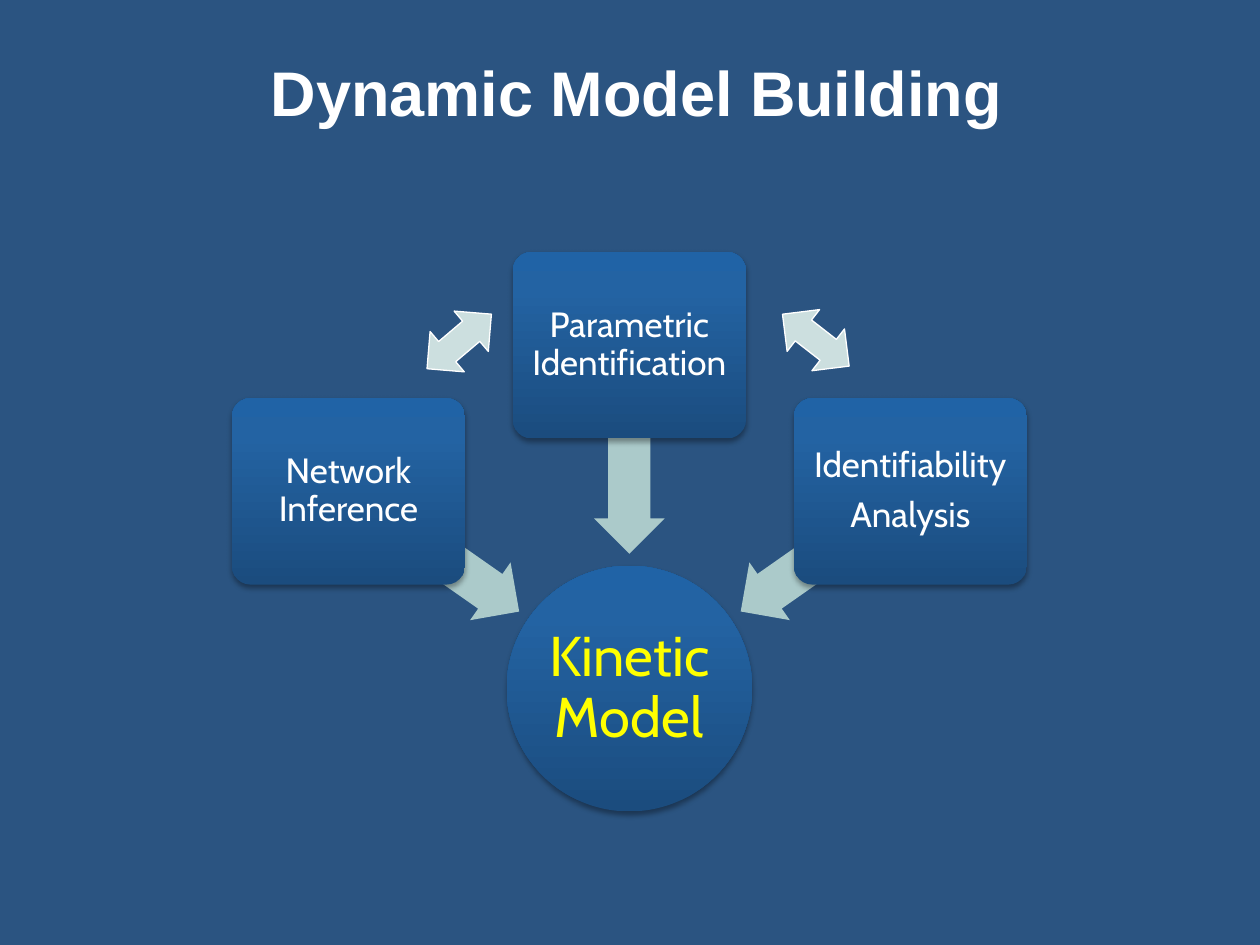
from lxml import etree
from pptx import Presentation
from pptx.dml.color import RGBColor
from pptx.enum.shapes import MSO_SHAPE
from pptx.enum.text import MSO_ANCHOR, MSO_AUTO_SIZE, PP_ALIGN
from pptx.oxml import parse_xml
from pptx.util import Inches, Pt

CIRCLE = MSO_SHAPE.OVAL
BOX = MSO_SHAPE.ROUNDED_RECTANGLE
ARROW = MSO_SHAPE.LEFT_ARROW
DOUBLE_ARROW = MSO_SHAPE.LEFT_RIGHT_ARROW
MIDDLE = MSO_ANCHOR.MIDDLE
NO_AUTOFIT = MSO_AUTO_SIZE.NONE
CENTER = PP_ALIGN.CENTER
LEFT = PP_ALIGN.LEFT

NAMESPACE = "http://schemas.openxmlformats.org/drawingml/2006/main"
GRADIENT = f"""<a:gradFill xmlns:a="{NAMESPACE}" rotWithShape="1"><a:gsLst>
<a:gs pos="0"><a:srgbClr val="1B4C7E"/></a:gs>
<a:gs pos="80000"><a:srgbClr val="2363A3"/></a:gs>
<a:gs pos="100000"><a:srgbClr val="2063A6"/></a:gs>
</a:gsLst><a:lin ang="16200000" scaled="0"/></a:gradFill>"""
SHADOW = f"""<a:outerShdw xmlns:a="{NAMESPACE}" blurRad="40000" dist="23000" dir="5400000"
rotWithShape="0"><a:srgbClr val="000000"><a:alpha val="35000"/></a:srgbClr></a:outerShdw>"""


def color(value):
    return RGBColor.from_string(value)


def add_node(slide, kind, position, lines, size, text_color, inset):
    shape = slide.shapes.add_shape(kind, *[Inches(value) for value in position])
    if kind == BOX:
        shape.adjustments[0] = 0.1
    shape.line.fill.background()
    shape.shadow.inherit = False
    properties = shape._element.spPr
    properties.find(f"{{{NAMESPACE}}}ln").addprevious(parse_xml(GRADIENT))
    properties.find(f"{{{NAMESPACE}}}effectLst").append(etree.fromstring(SHADOW))
    frame = shape.text_frame
    frame.word_wrap = True
    frame.vertical_anchor = MIDDLE
    frame.margin_left = frame.margin_right = Inches(inset)
    frame.margin_top = frame.margin_bottom = Inches(inset)
    for index, text in enumerate(lines):
        paragraph = frame.add_paragraph() if index else frame.paragraphs[0]
        paragraph.alignment = CENTER
        paragraph.line_spacing = 0.9
        paragraph.space_after = Pt(round(size * 0.35))
        run = paragraph.add_run()
        run.text = text
        run.font.name = "Cabin"
        run.font.size = Pt(size)
        run.font.color.rgb = color(text_color)


presentation = Presentation()
presentation.slide_width = Inches(10)
presentation.slide_height = Inches(7.5)
slide = presentation.slides.add_slide(presentation.slide_layouts[5])
slide.background.fill.solid()
slide.background.fill.fore_color.rgb = color("2B5481")

title = slide.shapes.title
title.left, title.top = Inches(2.05), Inches(0.25)
title.width, title.height = Inches(8.06), Inches(0.82)
frame = title.text_frame
frame.auto_size = NO_AUTOFIT
frame.word_wrap = True
frame.vertical_anchor = MIDDLE
frame.margin_left = frame.margin_right = Inches(0.1)
frame.margin_top, frame.margin_bottom = Inches(0.17), Inches(0.04)
paragraph = frame.paragraphs[0]
paragraph.alignment = LEFT
run = paragraph.add_run()
run.text = "Dynamic Model Building"
run.font.name = "Arial"
run.font.size = Pt(36)
run.font.bold = True
run.font.color.rgb = color("FFFFFF")

add_node(slide, CIRCLE, (4.02, 4.49, 1.95, 1.95), ["Kinetic Model"], 32, "FFFF00", 0.02)

steps = [
    (["Network Inference"], 3.16, 2.62, 4.1, 215),
    (["Parametric Identification"], 2, 4.17, 3.29, 270),
    (["Identifiability", "Analysis"], 3.16, 5.73, 4.1, 325),
]
for index, (lines, box_top, arrow_left, arrow_top, rotation) in enumerate(steps):
    arrow = slide.shapes.add_shape(
        ARROW, Inches(arrow_left), Inches(arrow_top), Inches(1.65), Inches(0.56))
    arrow.adjustments[0] = 0.6
    arrow.adjustments[1] = 0.5
    arrow.rotation = rotation
    arrow.shadow.inherit = False
    arrow.fill.solid()
    arrow.fill.fore_color.rgb = color("ABCACA")
    arrow.line.fill.background()
    box_left = 1.84 + 2.23 * index
    add_node(slide, BOX, (box_left, box_top, 1.85, 1.48), lines, 20, "FFFFFF", 0.04)

for left, top, rotation in [(3.31, 2.5, 319.7), (6.14, 2.49, 37.9)]:
    link = slide.shapes.add_shape(
        DOUBLE_ARROW, Inches(left), Inches(top), Inches(0.67), Inches(0.42))
    link.rotation = rotation
    link.shadow.inherit = False
    link.fill.solid()
    link.fill.fore_color.rgb = color("CCDFDF")
    link.line.color.rgb = color("FFFFFF")
    link.line.width = Pt(0.75)

presentation.save("out.pptx")
